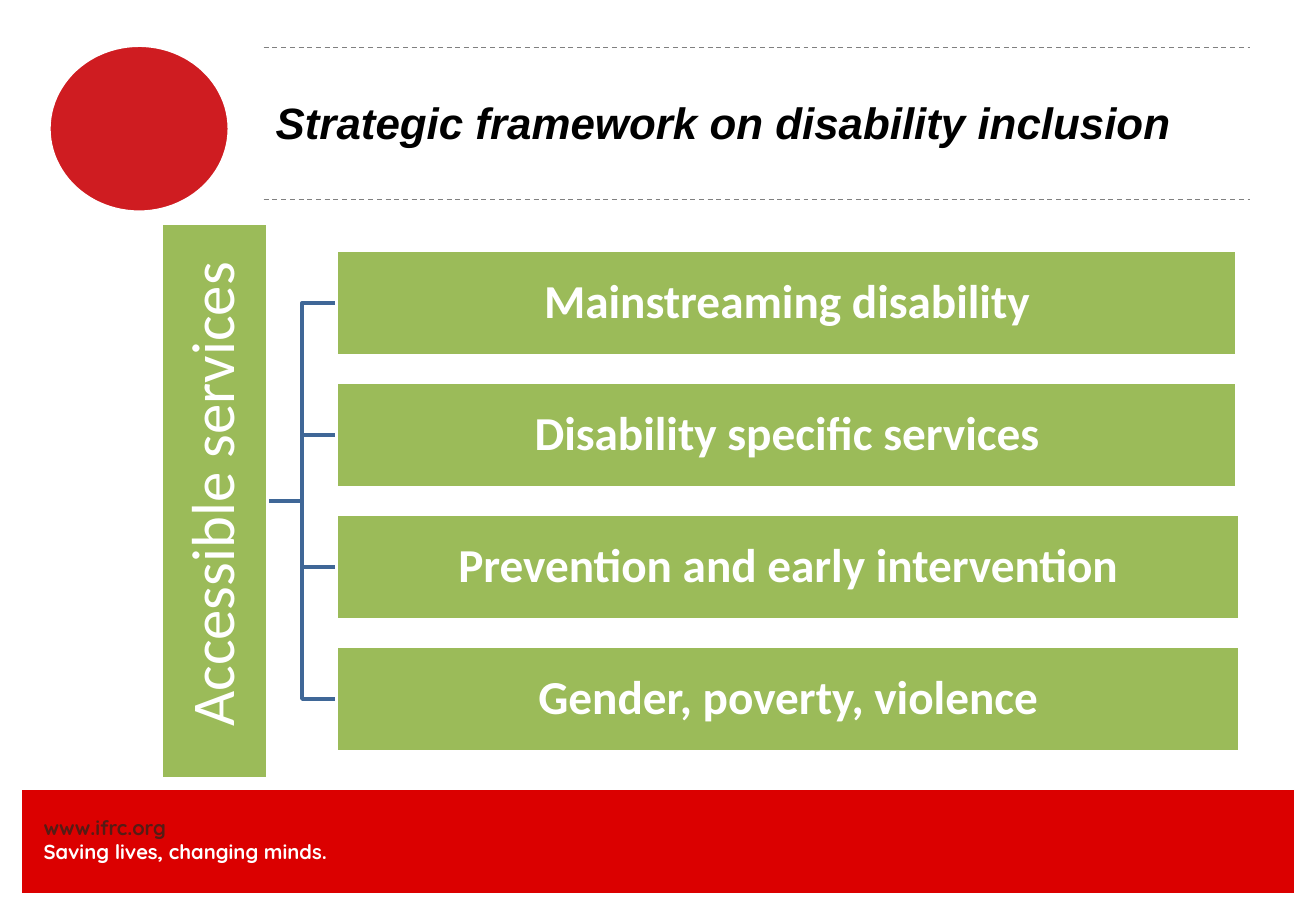
from pptx import Presentation
from pptx.dml.color import RGBColor
from pptx.enum.dml import MSO_LINE
from pptx.enum.shapes import MSO_CONNECTOR, MSO_SHAPE
from pptx.enum.text import MSO_ANCHOR, PP_ALIGN
from pptx.oxml.ns import qn
from pptx.util import Inches, Pt
from lxml.etree import SubElement

COLOURS = {
    "white": "FFFFFF", "black": "000000", "footer": "DB0000", "disc": "CF1C21",
    "address": "551C15", "rule": "808080", "bracket": "3F6797", "green": "9BBB59",
}


class Page:
    def __init__(self, deck):
        self.width, self.height = deck.slide_width, deck.slide_height
        self.shapes = deck.slides.add_slide(deck.slide_layouts[6]).shapes

    def colour(self, name):
        return RGBColor.from_string(COLOURS[name])

    def across(self, percent):
        return round(self.width * percent / 100)

    def down(self, percent):
        return round(self.height * percent / 100)

    def place(self, left, top, width, height):
        return self.across(left), self.down(top), self.across(width), self.down(height)

    def outline(self, shape, colour, weight):
        shape.line.color.rgb = self.colour(colour)
        shape.line.width = Pt(weight)

    def block(self, area, fill, weight, kind=MSO_SHAPE.RECTANGLE):
        shape = self.shapes.add_shape(kind, *self.place(*area))
        shape.shadow.inherit = False
        shape.fill.solid()
        shape.fill.fore_color.rgb = self.colour(fill)
        self.outline(shape, "white", weight)
        return shape

    def fill_text(self, shape, lines, font, size, bold=True, italic=False,
                  align=PP_ALIGN.LEFT, anchor=MSO_ANCHOR.MIDDLE, inset=0, spacing=1.0):
        frame = shape.text_frame
        frame.word_wrap = True
        frame.vertical_anchor = anchor
        frame.margin_left = frame.margin_right = Inches(inset)
        frame.margin_top = frame.margin_bottom = Inches(inset)
        for index, (text, colour) in enumerate(lines):
            para = frame.add_paragraph() if index else frame.paragraphs[0]
            para.alignment = align
            para.line_spacing = spacing
            span = para.add_run()
            span.text = text
            span.font.name, span.font.size = font, Pt(size)
            span.font.bold, span.font.italic = bold, italic
            span.font.color.rgb = self.colour(colour)

    def text(self, area, lines, font, size, **style):
        box = self.shapes.add_textbox(*self.place(*area))
        self.fill_text(box, lines, font, size, **style)

    def bar(self, area, label, size, bold, inset):
        shape = self.block(area, "green", 2)
        self.fill_text(shape, [(label, "white")], "Calibri", size, bold=bold,
                       align=PP_ALIGN.CENTER, inset=inset, spacing=0.9)
        return shape

    def rule(self, left, right, level):
        line = self.shapes.add_connector(
            MSO_CONNECTOR.STRAIGHT, self.across(left), self.down(level),
            self.across(right), self.down(level))
        self.outline(line, "rule", 0.75)
        line.line.dash_style = MSO_LINE.DASH
        SubElement(line._element.spPr, qn("a:effectLst"))

    def bracket(self, left, right, start, end):
        middle = (left + right) / 2
        builder = self.shapes.build_freeform(self.across(left), self.down(start))
        corners = [(middle, start), (middle, end), (right, end)]
        builder.add_line_segments(
            [(self.across(x), self.down(y)) for x, y in corners], close=False)
        shape = builder.convert_to_shape()
        shape.shadow.inherit = False
        shape.fill.background()
        self.outline(shape, "bracket", 2)


def main():
    deck = Presentation()
    deck.slide_width, deck.slide_height = Inches(10.83), Inches(7.5)
    page = Page(deck)

    page.block((1.66, 86.67, 96.68, 11.47), "footer", 0.75)
    page.text((3.32, 89.47, 34.16, 5.33),
              [("www.ifrc.org", "address"), ("Saving lives, changing minds.", "white")],
              "Quicksand", 12, anchor=MSO_ANCHOR.TOP)
    page.block((3.69, 4.93, 13.76, 18.4), "disc", 2.5, MSO_SHAPE.OVAL)
    for level in (5.2, 21.87):
        page.rule(20.04, 95.01, level)
    page.text((20.04, 5.07, 74.98, 16.67),
              [("Strategic framework on disability inclusion", "black")],
              "Arial", 26, italic=True, inset=0.1)

    services = [
        ("Mainstreaming disability", 68.42),
        ("Disability specific services", 68.42),
        ("Prevention and early intervention", 68.61),
        ("Gender, poverty, violence", 68.61),
    ]
    bar_left, bar_height, first_top, step = 25.58, 11.6, 27.47, 14.49
    tops = [first_top + row * step for row in range(len(services))]
    centre = (tops[0] + tops[-1] + bar_height) / 2
    for top in reversed(tops):
        page.bracket(20.31, bar_left, centre, top + bar_height / 2)
    heading = page.bar((-4.8, centre - bar_height / 2, 42.2, bar_height),
                       " Accessible services", 36, False, 0.03)
    heading.rotation = 270
    for top, (label, width) in zip(tops, services):
        page.bar((bar_left, top, width, bar_height), label, 28, True, 0.02)

    deck.save("out.pptx")


if __name__ == "__main__":
    main()
